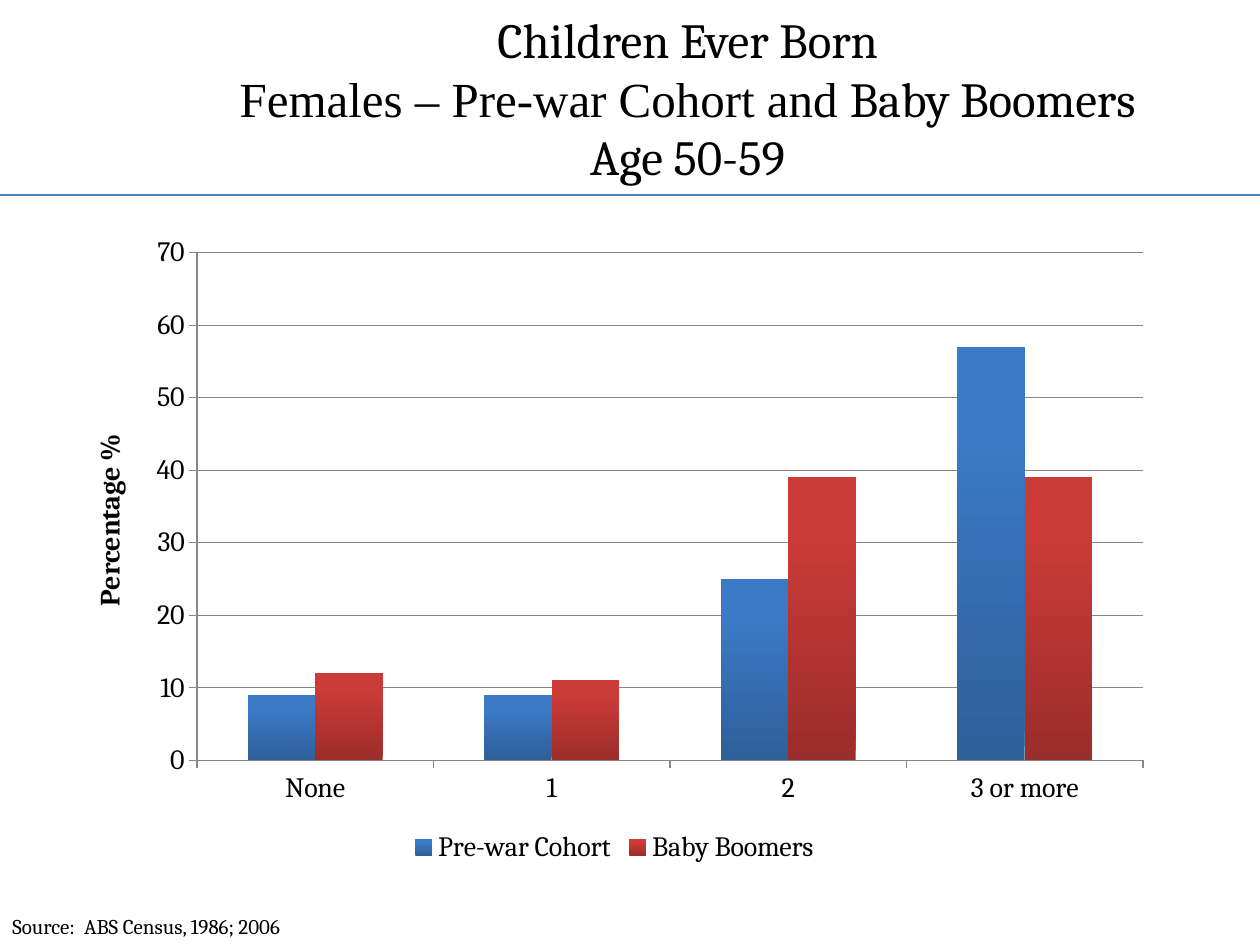
from pptx import Presentation
from pptx.chart.data import CategoryChartData
from pptx.dml.color import RGBColor
from pptx.enum.chart import XL_CHART_TYPE as ChartType, XL_LEGEND_POSITION as LegendPosition, XL_TICK_MARK as TickMark
from pptx.enum.shapes import MSO_CONNECTOR as Connector
from pptx.enum.text import MSO_ANCHOR as Anchor, MSO_AUTO_SIZE as AutoSize, PP_ALIGN as Align
from pptx.oxml.ns import qn
from pptx.util import Pt
from lxml.etree import SubElement

BLACK = RGBColor(0x00, 0x00, 0x00)
RULE_BLUE = RGBColor(0x4B, 0x7E, 0xBC)
GRID_GRAY = RGBColor(0x86, 0x86, 0x86)
BLUE_DARK = RGBColor(0x2E, 0x5F, 0x99)
BLUE_LIGHT = RGBColor(0x3C, 0x7A, 0xC7)
RED_DARK = RGBColor(0x9B, 0x2D, 0x2A)
RED_LIGHT = RGBColor(0xCB, 0x3B, 0x37)
SERIF = "Cambria"


def px(n):
    return round(n * 914400 / 126)


def set_font(font, size, bold=False):
    font.name = SERIF
    font.size = Pt(size)
    font.bold = bold
    font.color.rgb = BLACK


prs = Presentation()
prs.slide_width, prs.slide_height = px(1260), px(945)
slide = prs.slides.add_slide(prs.slide_layouts[5])

title = slide.shapes.title
title.left, title.top, title.width, title.height = px(126), px(0), px(1134), px(195)
title.text_frame.auto_size = AutoSize.NONE
title.text_frame.vertical_anchor = Anchor.MIDDLE
heading = title.text_frame.paragraphs[0]
heading.alignment = Align.CENTER
heading.font.size = Pt(28)
heading.font.color.rgb = BLACK
for text, typeface, breaks in [
    ("Children Ever Born ", SERIF, True),
    ("Females – Pre-war Cohort and ", "Times New Roman", False),
    ("Baby Boomers ", SERIF, True),
    ("Age 50-59 ", SERIF, False),
]:
    run = heading.add_run()
    run.text = text
    run.font.name = typeface
    if breaks:
        heading.add_line_break()

rule = slide.shapes.add_connector(Connector.STRAIGHT, px(0), px(195), px(1260), px(195))
rule.line.color.rgb = RULE_BLUE
rule.line.width = Pt(1.5)
SubElement(rule._element.spPr, qn("a:effectLst"))

source = slide.shapes.add_textbox(px(0), px(907), px(407), px(38)).text_frame
source.word_wrap = True
source.auto_size = AutoSize.SHAPE_TO_FIT_TEXT
source.text = "Source:  ABS Census, 1986; 2006"
set_font(source.paragraphs[0].font, 12)

births = CategoryChartData(number_format="0")
births.categories = ["None", "1", "2", "3 or more"]
births.add_series("Pre-war Cohort", [9, 9, 25, 57])
births.add_series("Baby Boomers", [12, 11, 39, 39])
chart = slide.shapes.add_chart(
    ChartType.COLUMN_CLUSTERED, px(64), px(224), px(1101), px(645), births
).chart
chart.has_title = False
set_font(chart.font, 10)
chart.has_legend = True
chart.legend.position = LegendPosition.BOTTOM
chart.legend.include_in_layout = False
set_font(chart.legend.font, 16)

columns = chart.plots[0]
columns.gap_width = 150
columns.overlap = 0
columns.vary_by_categories = False
for cohort, shades in zip(columns.series, [(BLUE_DARK, BLUE_LIGHT), (RED_DARK, RED_LIGHT)]):
    fill = cohort.format.fill
    fill.gradient()
    fill.gradient_angle = 90
    for stop, shade, position in zip(fill.gradient_stops, shades, (0, 0.8)):
        stop.color.rgb = shade
        stop.position = position

for axis in (chart.category_axis, chart.value_axis):
    axis.major_tick_mark = TickMark.OUTSIDE
    axis.minor_tick_mark = TickMark.NONE
    axis.format.line.color.rgb = GRID_GRAY
    set_font(axis.tick_labels.font, 16)

percentage = chart.value_axis
percentage.minimum_scale = 0
percentage.maximum_scale = 70
percentage.major_unit = 10
percentage.has_major_gridlines = True
percentage.major_gridlines.format.line.color.rgb = GRID_GRAY
percentage.tick_labels.number_format = "0"
percentage.tick_labels.number_format_is_linked = False
percentage.axis_title.text_frame.text = "Percentage %"
set_font(percentage.axis_title.text_frame.paragraphs[0].font, 16, bold=True)

prs.save("out.pptx")
